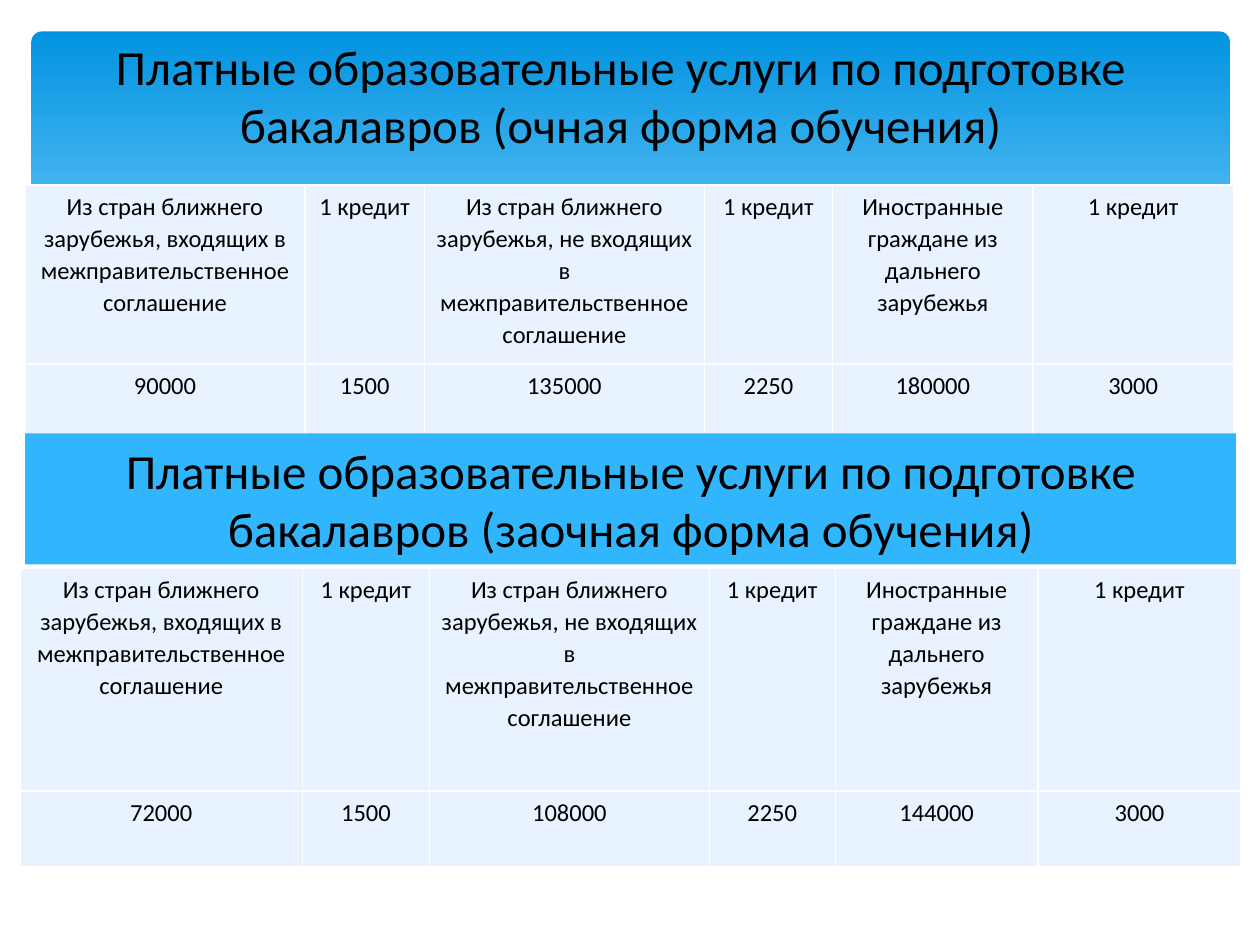
from dataclasses import dataclass

from pptx import Presentation
from pptx.dml.color import RGBColor
from pptx.enum.shapes import MSO_SHAPE
from pptx.enum.text import MSO_ANCHOR, MSO_AUTO_SIZE, PP_ALIGN
from pptx.oxml import parse_xml
from pptx.oxml.ns import nsdecls
from pptx.util import Inches, Pt

RECT, ROUND = MSO_SHAPE.RECTANGLE, MSO_SHAPE.ROUNDED_RECTANGLE
MIDDLE, BOTTOM = MSO_ANCHOR.MIDDLE, MSO_ANCHOR.BOTTOM
CENTER = PP_ALIGN.CENTER
NO_FIT = MSO_AUTO_SIZE.NONE


@dataclass(frozen=True)
class Theme:
    font: str = "Calibri"
    head: float = 28
    body: float = 14
    text: str = "000000"
    top: str = "0293E0"
    low: str = "83D3FE"
    band: str = "31B6FD"
    cell: str = "E8F3FF"
    edge: str = "FFFFFF"


THEME = Theme()
HEAD = "Платные образовательные услуги по подготовке бакалавров ({} форма обучения)"
CREDIT = "1 кредит"
LABELS = [
    "Из стран ближнего зарубежья, входящих в межправительственное соглашение", CREDIT,
    "Из стран ближнего зарубежья, не входящих в межправительственное соглашение", CREDIT,
    "Иностранные граждане из дальнего зарубежья", CREDIT,
]
DAY = ["90000", "1500", "135000", "2250", "180000", "3000"]
AWAY = ["72000", "1500", "108000", "2250", "144000", "3000"]


def rgb(code):
    return RGBColor.from_string(code)


def write(frame, text, size):
    frame.text = text
    para = frame.paragraphs[0]
    para.alignment = CENTER
    para.font.name = THEME.font
    para.font.size = Pt(size)
    para.font.color.rgb = rgb(THEME.text)
    return para


def add_box(slide, kind, x, y, w, h):
    box = slide.shapes.add_shape(kind, Inches(x), Inches(y), Inches(w), Inches(h))
    box.shadow.inherit = False
    box.line.fill.background()
    return box


def add_panel(slide):
    """Draw the rounded gradient panel behind the title."""
    panel = add_box(slide, ROUND, 0.25, 0.25, 9.51, 2.7)
    panel.adjustments[0] = 0.03
    panel.fill.gradient()
    panel.fill.gradient_angle = 270
    for stop, place, code in zip(panel.fill.gradient_stops, (0, 0.9), (THEME.top, THEME.low)):
        stop.position = place
        stop.color.rgb = rgb(code)


def set_title(slide, text):
    title = slide.shapes.title
    title.left, title.top = Inches(0.35), Inches(0.37)
    title.width, title.height = Inches(9.15), Inches(1.37)
    frame = title.text_frame
    write(frame, text, THEME.head)
    frame.word_wrap = True
    frame.auto_size = NO_FIT
    frame.vertical_anchor = BOTTOM
    frame.margin_top, frame.margin_bottom = 0, Inches(0.52)
    slide.shapes._spTree.append(title._element)  # in front of the panel


def add_band(slide, text):
    band = add_box(slide, RECT, 0.2, 3.44, 9.61, 1.04)
    band.fill.solid()
    band.fill.fore_color.rgb = rgb(THEME.band)
    band.text_frame.word_wrap = True
    band.text_frame.vertical_anchor = MIDDLE
    write(band.text_frame, text, THEME.head)


def style_cell(cell, text):
    para = write(cell.text_frame, text, THEME.body)
    para.line_spacing = 1.07
    cell.margin_left = cell.margin_right = Inches(0.08)
    cell.margin_top = cell.margin_bottom = Inches(0.04)
    props = cell._tc.get_or_add_tcPr()
    for side in ("lnL", "lnR", "lnT", "lnB"):
        props.append(parse_xml(
            f'<a:{side} {nsdecls("a")} w="{Pt(1)}"><a:solidFill>'
            f'<a:srgbClr val="{THEME.edge}"/></a:solidFill></a:{side}>'))
    cell.fill.solid()
    cell.fill.fore_color.rgb = rgb(THEME.cell)


def add_prices(slide, x, y, widths, heights, prices):
    rows = [LABELS, prices]
    table = slide.shapes.add_table(
        len(rows), len(widths), Inches(x), Inches(y),
        Inches(sum(widths)), Inches(sum(heights))).table
    table.first_row = table.horz_banding = False
    for col, width in zip(table.columns, widths):
        col.width = Inches(width)
    for row, height, texts in zip(table.rows, heights, rows):
        row.height = Inches(height)
        for cell, text in zip(row.cells, texts):
            style_cell(cell, text)


def main():
    deck = Presentation()
    deck.slide_width, deck.slide_height = Inches(10), Inches(7.5)
    slide = deck.slides.add_slide(deck.slide_layouts[5])
    add_panel(slide)
    add_prices(slide, 0.2, 1.47, [2.22, 0.95, 2.22, 1.02, 1.59, 1.59], [1.42, 0.6], DAY)
    set_title(slide, HEAD.format("очная"))
    add_band(slide, HEAD.format("заочная"))
    add_prices(slide, 0.16, 4.51, [2.24, 1.01, 2.22, 1, 1.61, 1.61], [1.77, 0.6], AWAY)
    deck.save("out.pptx")


if __name__ == "__main__":
    main()
